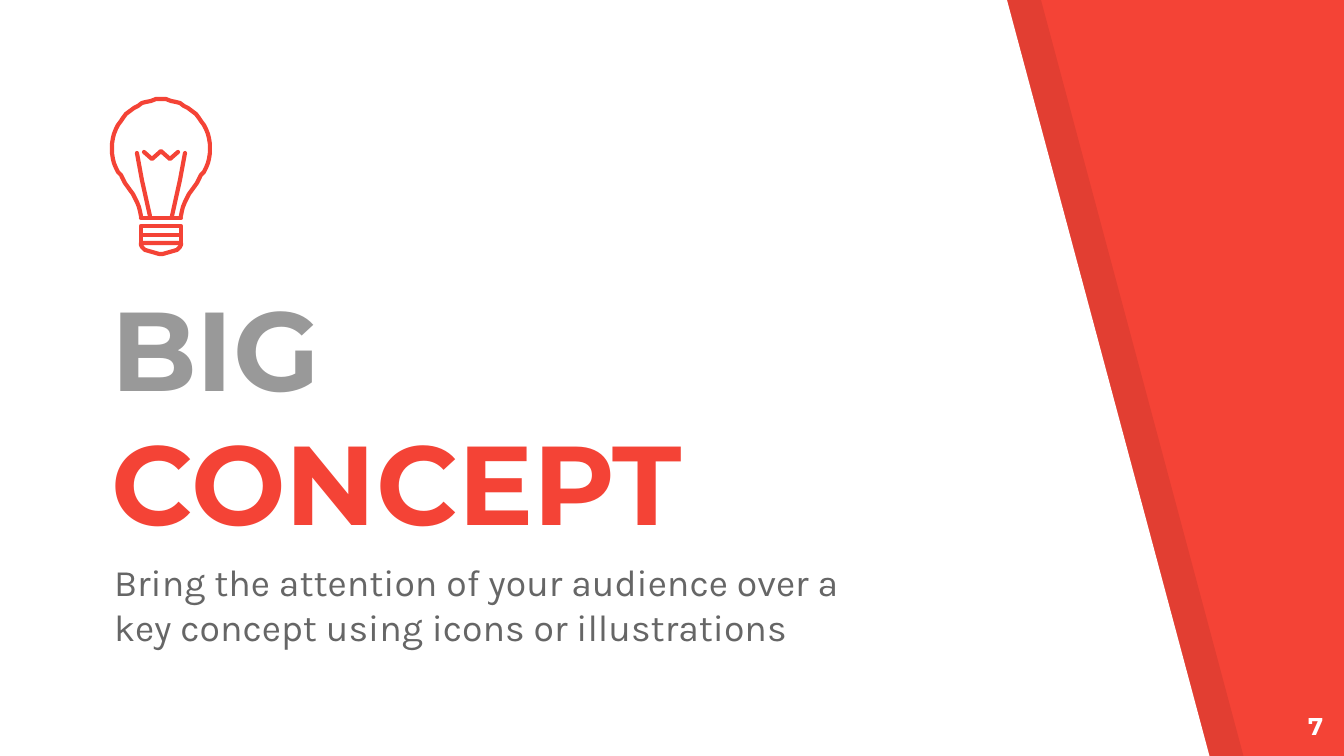
from dataclasses import dataclass

from lxml import etree
from pptx import Presentation
from pptx.dml.color import RGBColor
from pptx.enum.shapes import MSO_CONNECTOR
from pptx.enum.text import MSO_ANCHOR, PP_ALIGN
from pptx.oxml.ns import qn
from pptx.util import Pt

EMU_PER_PX = 914400 / 134.4
STRAIGHT = MSO_CONNECTOR.STRAIGHT
TOP, BOTTOM = MSO_ANCHOR.TOP, MSO_ANCHOR.BOTTOM
LEFT, RIGHT = PP_ALIGN.LEFT, PP_ALIGN.RIGHT

RED, WHITE, BLACK = "F44336", "FFFFFF", "000000"
LIGHT_GRAY, DARK_GRAY = "999999", "666666"
TEXT_INSET = 13
STROKE_WIDTH = 2.25

PANEL = [(0, -1), (0, 758), (1210, 758), (1007, 0)]
PANEL_SHADOW_OFFSET = 34
PANEL_SHADOW_OPACITY = 7

# Bulb points: distance right of the bulb's axis, and y on the slide.
BULB_AXIS = 161
BASE_HALF_WIDTH = 20
COLLAR_Y = 218
THREAD_EDGES = [226, 235, 243]
GLASS_HALF = [
    (20, 216), (21, 211), (22, 207), (24, 202), (26, 198), (28, 194),
    (31, 190), (36, 183), (38, 179), (40, 175), (43, 172), (45, 168),
    (47, 163), (48, 159), (49, 153), (49, 149), (49, 144), (48, 138),
    (47, 134), (45, 129), (43, 125), (40, 121), (38, 118), (35, 114),
    (31, 111), (27, 108), (23, 106), (19, 103), (15, 102), (10, 101),
    (5, 99), (0, 99),
]
CAP_HALF = [(20, 243), (20, 245), (19, 247), (18, 248), (16, 250), (2, 254), (0, 254)]
FILAMENT_HALF = [(17, 152), (9, 159), (1, 152), (0, 151)]
ROD = [(24, 153), (19, 180), (11, 216)]


@dataclass
class Run:
    text: str
    color: str


@dataclass
class TextBlock:
    left: int
    top: int
    width: int
    height: int
    runs: list[Run]
    font: str
    size: int
    bold: bool = False
    anchor: MSO_ANCHOR = TOP
    align: PP_ALIGN = LEFT
    space_before: int = 0


TEXT_BLOCKS = [
    TextBlock(98, 390, 771, 171, [Run("BIG ", LIGHT_GRAY), Run("CONCEPT", RED)],
              "Montserrat", 60, bold=True, anchor=BOTTOM),
    TextBlock(101, 546, 771, 116,
              [Run("Bring the attention of your audience over a key concept "
                   "using icons or illustrations", DARK_GRAY)],
              "Karla", 20, space_before=6),
    TextBlock(1255, 698, 81, 58, [Run("7", WHITE)], "Montserrat", 13,
              bold=True, align=RIGHT),
]


def px(length: int) -> int:
    return round(length * EMU_PER_PX)


def set_color(color_format, color: str) -> None:
    color_format.rgb = RGBColor.from_string(color)


def fill_solid(fill, color: str) -> None:
    fill.solid()
    set_color(fill.fore_color, color)


def mirrored(half: list[tuple]) -> list[tuple]:
    """Join a half outline, ending on the axis, to its reflection."""
    return half + [(-x, y) for x, y in reversed(half[:-1])]


def add_polygon(shapes, points: list[tuple], closed: bool = True):
    builder = shapes.build_freeform(*points[0], scale=EMU_PER_PX)
    builder.add_line_segments(points[1:], close=closed)
    shape = builder.convert_to_shape()
    shape.shadow.inherit = False
    return shape


def add_panel(slide, offset: int, color: str, opacity: int = 100) -> None:
    shape = add_polygon(slide.shapes, [(x + offset, y) for x, y in PANEL])
    fill_solid(shape.fill, color)
    shape.line.fill.background()
    if opacity < 100:
        color_element = shape.fill._xPr.find(".//" + qn("a:srgbClr"))
        etree.SubElement(color_element, qn("a:alpha"), val=str(opacity * 1000))


def style_stroke(line) -> None:
    """Red line with round ends and joins."""
    fill_solid(line.fill, RED)
    line.width = Pt(STROKE_WIDTH)
    line_element = line._get_or_add_ln()
    line_element.set("cap", "rnd")
    etree.SubElement(line_element, qn("a:round"))


def add_stroke(shapes, points: list[tuple], closed: bool = False) -> None:
    shape = add_polygon(shapes, [(BULB_AXIS + x, y) for x, y in points], closed)
    shape.fill.background()
    style_stroke(shape.line)


def add_bulb(slide) -> None:
    shapes = slide.shapes.add_group_shape().shapes
    for top, bottom in zip(THREAD_EDGES, THREAD_EDGES[1:]):
        right, left = BASE_HALF_WIDTH, -BASE_HALF_WIDTH
        add_stroke(shapes, [(right, bottom), (right, top), (left, top), (left, bottom)],
                   closed=True)
    add_stroke(shapes, mirrored(CAP_HALF), closed=True)
    add_stroke(shapes, mirrored(GLASS_HALF))
    add_stroke(shapes, mirrored(FILAMENT_HALF))
    for side in (-1, 1):
        add_stroke(shapes, [(side * x, y) for x, y in ROD])
    collar = shapes.add_connector(
        STRAIGHT, px(BULB_AXIS - BASE_HALF_WIDTH), px(COLLAR_Y),
        px(BULB_AXIS + BASE_HALF_WIDTH), px(COLLAR_Y))
    style_stroke(collar.line)
    etree.SubElement(collar._element.spPr, qn("a:effectLst"))


def add_text(slide, block: TextBlock) -> None:
    box = slide.shapes.add_textbox(
        px(block.left), px(block.top), px(block.width), px(block.height))
    frame = box.text_frame
    frame.word_wrap = True
    frame.vertical_anchor = block.anchor
    frame.margin_left = frame.margin_right = px(TEXT_INSET)
    frame.margin_top = frame.margin_bottom = px(TEXT_INSET)
    paragraph = frame.paragraphs[0]
    paragraph.alignment = block.align
    paragraph.space_before = Pt(block.space_before)
    paragraph.font.name = block.font
    paragraph.font.size = Pt(block.size)
    paragraph.font.bold = block.bold
    for part in block.runs:
        run = paragraph.add_run()
        run.text = part.text
        set_color(run.font.color, part.color)


def main() -> None:
    presentation = Presentation()
    presentation.slide_width, presentation.slide_height = px(1344), px(756)
    slide = presentation.slides.add_slide(presentation.slide_layouts[6])
    fill_solid(slide.background.fill, RED)
    add_panel(slide, PANEL_SHADOW_OFFSET, BLACK, PANEL_SHADOW_OPACITY)
    add_panel(slide, 0, WHITE)
    add_bulb(slide)
    for block in TEXT_BLOCKS:
        add_text(slide, block)
    presentation.save("out.pptx")


if __name__ == "__main__":
    main()
